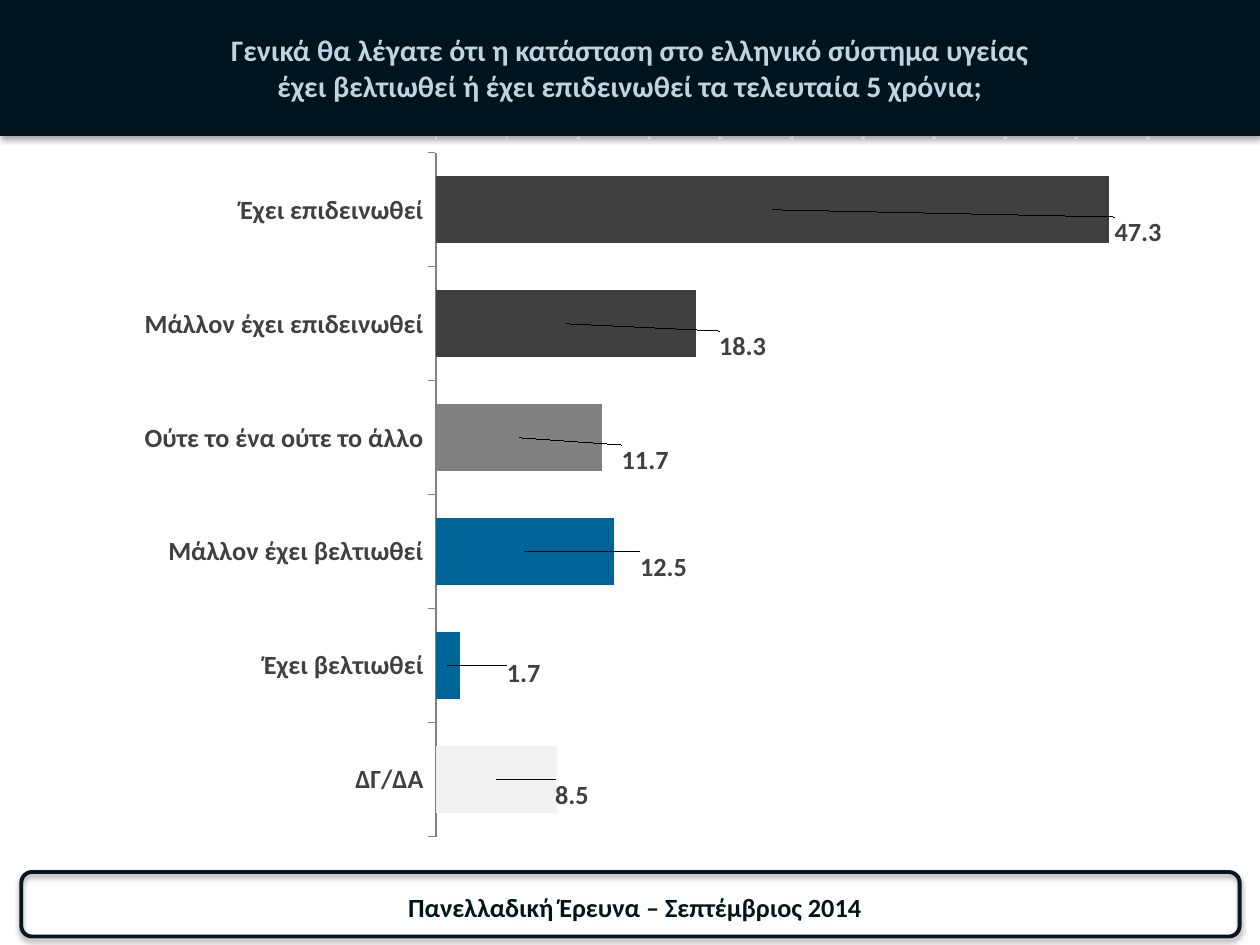
from lxml.etree import SubElement
from pptx import Presentation
from pptx.chart.data import CategoryChartData
from pptx.dml.color import RGBColor
from pptx.enum.chart import (XL_CHART_TYPE, XL_LABEL_POSITION, XL_TICK_LABEL_POSITION,
                             XL_TICK_MARK)
from pptx.enum.shapes import MSO_SHAPE
from pptx.enum.text import MSO_ANCHOR, PP_ALIGN
from pptx.oxml.ns import qn
from pptx.util import Cm, Pt

FONT = "Calibri"
NAVY = RGBColor(0x00, 0x14, 0x1E)
FRAME = RGBColor(0x0A, 0x15, 0x20)
PALE_BLUE = RGBColor(0xBF, 0xD3, 0xE3)
WHITE = RGBColor(0xFF, 0xFF, 0xFF)
BLACK = RGBColor(0x00, 0x00, 0x00)
DARK = RGBColor(0x40, 0x40, 0x40)
GREY = RGBColor(0x80, 0x80, 0x80)
BLUE = RGBColor(0x00, 0x66, 0x99)
LIGHT = RGBColor(0xF2, 0xF2, 0xF2)

QUESTION = ("Γενικά θα λέγατε ότι η κατάσταση στο ελληνικό σύστημα υγείας\v"
            "έχει βελτιωθεί ή έχει επιδεινωθεί τα τελευταία 5 χρόνια;")
SURVEY = "Πανελλαδική Έρευνα – Σεπτέμβριος 2014"

# answer, percentage, bar colour, label shift from bar centre (fractions of the chart)
ANSWERS = [
    ("Έχει επιδεινωθεί", 47.3, DARK, (0.29, 0.03)),
    ("Μάλλον έχει επιδεινωθεί", 18.3, DARK, (0.14, 0.03)),
    ("Ούτε το ένα ούτε το άλλο", 11.7, GREY, (0.1, 0.03)),
    ("Μάλλον έχει βελτιωθεί", 12.5, BLUE, (0.11, 0.02)),
    ("Έχει βελτιωθεί", 1.7, BLUE, (0.06, 0.01)),
    ("ΔΓ/ΔΑ", 8.5, LIGHT, (0.06, 0.02)),
]


def style_font(font, size, color, bold=True):
    font.name = FONT
    font.size = Pt(size)
    font.bold = bold
    font.color.rgb = color


def add_panel(slide, preset, box, opacity):
    """Add an unfilled, unlined shape with a soft shadow straight below it."""
    panel = slide.shapes.add_shape(preset, *box)
    panel.fill.background()
    panel.line.fill.background()
    panel.shadow.inherit = False
    effects = panel.element.spPr.find(qn("a:effectLst"))
    shadow = SubElement(effects, qn("a:outerShdw"), blurRad=str(Pt(3.1)),
                        dist=str(Pt(1.7)), dir="5400000", rotWithShape="0")
    shade = SubElement(shadow, qn("a:srgbClr"), val="000000")
    SubElement(shade, qn("a:alpha"), val=str(opacity * 1000))
    return panel


def add_text(slide, box, text, size, color):
    frame = slide.shapes.add_textbox(*box).text_frame
    frame.word_wrap = True
    frame.vertical_anchor = MSO_ANCHOR.MIDDLE
    paragraph = frame.paragraphs[0]
    paragraph.text = text
    paragraph.alignment = PP_ALIGN.CENTER
    for run in paragraph.runs:
        style_font(run.font, size, color)


def set_layout(parent, position, **settings):
    """Give a chart part a manual layout, placed at an index among its children."""
    layout = parent.find(qn("c:layout"))
    if layout is not None:
        parent.remove(layout)
    layout = SubElement(parent, qn("c:layout"))
    parent.insert(position, layout)
    manual = SubElement(layout, qn("c:manualLayout"))
    for tag, value in settings.items():
        SubElement(manual, qn(f"c:{tag}"), val=str(value))


def style_axes(chart):
    answers = chart.category_axis
    answers.reverse_order = True
    answers.major_tick_mark = XL_TICK_MARK.OUTSIDE
    answers.format.line.color.rgb = GREY
    style_font(answers.tick_labels.font, 15, DARK)

    percent = chart.value_axis
    percent.minimum_scale, percent.maximum_scale, percent.major_unit = 0, 50, 5
    percent.has_major_gridlines = False
    percent.major_tick_mark = XL_TICK_MARK.OUTSIDE
    percent.tick_label_position = XL_TICK_LABEL_POSITION.LOW
    percent.format.line.color.rgb = WHITE
    percent.format.line.width = Pt(0.75)
    percent.tick_labels.number_format = "General"
    percent.tick_labels.number_format_is_linked = False
    style_font(percent.tick_labels.font, 2, WHITE)


def style_bars(plot):
    plot.gap_width = 70
    plot.overlap = 100
    plot.vary_by_categories = False
    series = plot.series[0]
    labels = series.data_labels
    labels.show_value = True
    labels.number_format = "#,##0.0"
    labels.number_format_is_linked = False
    style_font(labels.font, 15, DARK)
    for index, (_, _, color, _) in enumerate(ANSWERS):
        point = series.points[index]
        point.format.fill.solid()
        point.format.fill.fore_color.rgb = color
        style_font(point.data_label.font, 15, DARK)
        point.data_label.position = XL_LABEL_POSITION.CENTER
    label_elements = labels._element.findall(qn("c:dLbl"))
    for element, (_, _, _, (right, down)) in zip(label_elements, ANSWERS):
        set_layout(element, 1, x=right, y=down)


def add_answer_chart(slide, box):
    data = CategoryChartData(number_format="#,##0.0")
    data.categories = [answer for answer, *_ in ANSWERS]
    data.add_series("Series 1", [percentage for _, percentage, *_ in ANSWERS])
    chart = slide.shapes.add_chart(XL_CHART_TYPE.BAR_STACKED, *box, data).chart
    chart.has_legend = False
    chart.has_title = False
    style_font(chart.font, 18, BLACK, bold=False)
    style_axes(chart)
    style_bars(chart.plots[0])
    plot_area = chart.element.find(qn("c:chart")).find(qn("c:plotArea"))
    set_layout(plot_area, 0, layoutTarget="inner", xMode="edge", yMode="edge",
               x=0.346, y=0.063, w=0.565, h=0.893)


def main():
    presentation = Presentation()
    presentation.slide_width, presentation.slide_height = Cm(25.4), Cm(19.05)
    slide = presentation.slides.add_slide(presentation.slide_layouts[6])

    header_box = (Cm(0), Cm(0), Cm(25.4), Cm(2.74))
    header = add_panel(slide, MSO_SHAPE.RECTANGLE, header_box, 35)
    header.fill.solid()
    header.fill.fore_color.rgb = NAVY
    footer = add_panel(slide, MSO_SHAPE.ROUNDED_RECTANGLE,
                       (Cm(0.43), Cm(17.58), Cm(24.56), Cm(1.3)), 38)
    footer.line.color.rgb = FRAME
    footer.line.width = Pt(2.25)

    add_text(slide, (Cm(5.08), Cm(17.83), Cm(15.44), Cm(0.89)), SURVEY, 15, NAVY)
    add_text(slide, header_box, QUESTION, 17, PALE_BLUE)
    add_answer_chart(slide, (Cm(0), Cm(2.11), Cm(25.4), Cm(15.44)))
    presentation.save("out.pptx")


if __name__ == "__main__":
    main()
